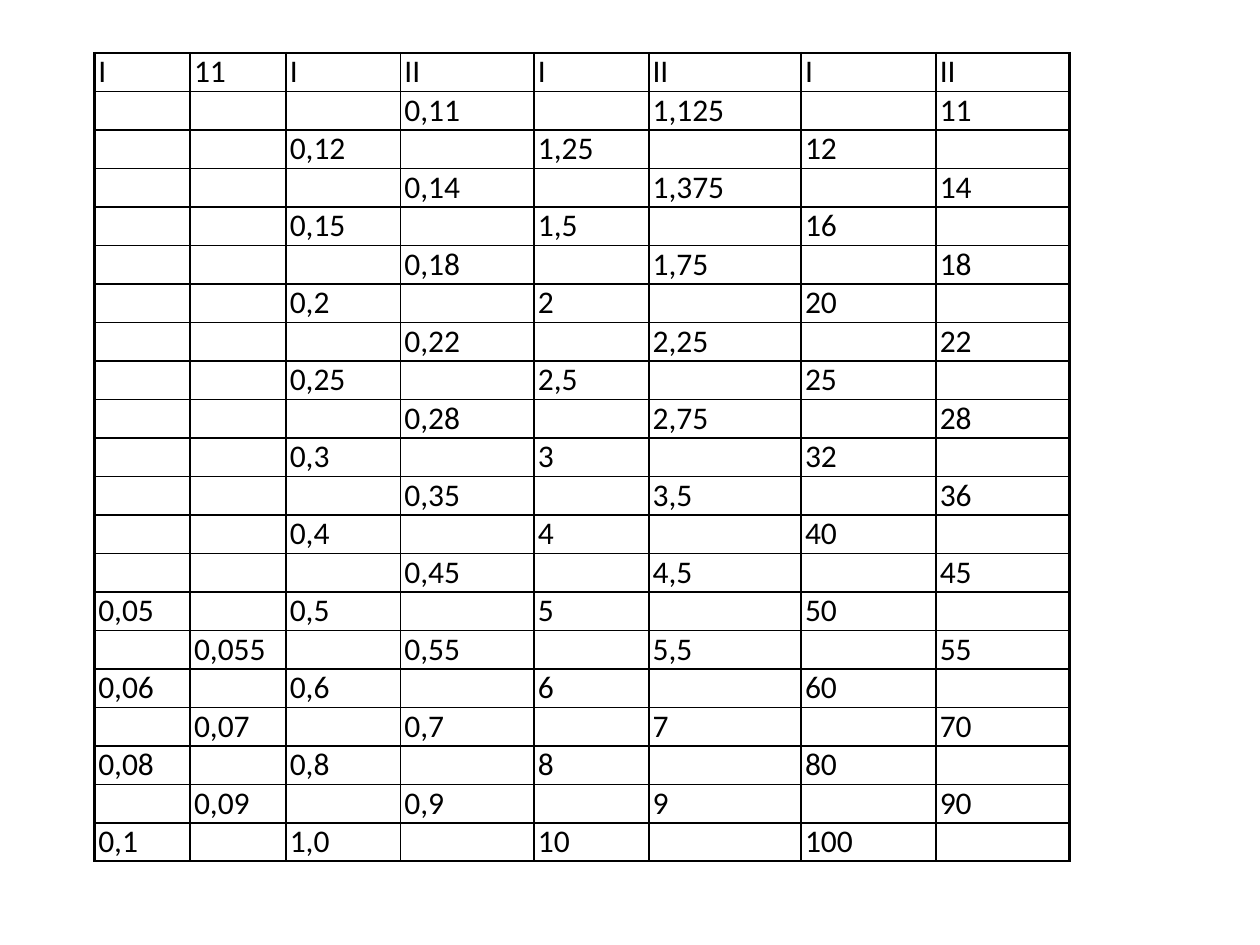
from lxml import etree
from pptx import Presentation
from pptx.dml.color import RGBColor
from pptx.enum import text
from pptx.oxml.ns import qn
from pptx.util import Inches, Pt

BLACK = RGBColor(0x00, 0x00, 0x00)
WHITE = RGBColor(0xFF, 0xFF, 0xFF)
FONT = "Calibri"
THIN, THICK = Pt(1), Pt(1.5)

LEFT, TOP, ROW_HEIGHT = 0.75, 0.42, 0.3
COL_WIDTHS = [0.76, 0.76, 0.91, 1.06, 0.91, 1.21, 1.07, 1.06]
HEADERS = ["I", "11", "I", "II", "I", "II", "I", "II"]

# One series per column pair, read downwards and ending in the last row
SERIES = [
    "0,05 0,055 0,06 0,07 0,08 0,09 0,1",
    "0,11 0,12 0,14 0,15 0,18 0,2 0,22 0,25 0,28 0,3 "
    "0,35 0,4 0,45 0,5 0,55 0,6 0,7 0,8 0,9 1,0",
    "1,125 1,25 1,375 1,5 1,75 2 2,25 2,5 2,75 3 "
    "3,5 4 4,5 5 5,5 6 7 8 9 10",
    "11 12 14 16 18 20 22 25 28 32 36 40 45 50 55 60 70 80 90 100",
]
N_ROWS = 1 + max(len(s.split()) for s in SERIES)


def build_grid():
    """Even rows fill the first column of each pair, odd rows the second."""
    grid = [HEADERS] + [[""] * len(HEADERS) for _ in range(N_ROWS - 1)]
    for pair, series in enumerate(SERIES):
        values = series.split()
        for row, value in enumerate(values, N_ROWS - len(values)):
            grid[row][2 * pair + row % 2] = value
    return grid


def add_border(cell, side, width):
    tc_pr = cell._tc.get_or_add_tcPr()
    ln = etree.SubElement(tc_pr, qn(f"a:ln{side}"), w=str(width))
    fill = etree.SubElement(ln, qn("a:solidFill"))
    etree.SubElement(fill, qn("a:srgbClr"), val=str(BLACK))


def style_cell(cell, value, outer):
    cell.margin_left = cell.margin_right = Inches(0.03)
    cell.margin_top = cell.margin_bottom = 0
    for side in "LRTB":
        add_border(cell, side, THICK if outer[side] else THIN)
    cell.fill.solid()
    cell.fill.fore_color.rgb = WHITE
    if not value:
        return
    p = cell.text_frame.paragraphs[0]
    p.text = value
    p.alignment = text.PP_ALIGN.JUSTIFY
    font = p.runs[0].font
    font.name, font.size = FONT, Pt(18)
    font.color.rgb = BLACK


def add_number_table(slide, grid):
    n_rows, n_cols = len(grid), len(COL_WIDTHS)
    table = slide.shapes.add_table(
        n_rows, n_cols, Inches(LEFT), Inches(TOP),
        Inches(sum(COL_WIDTHS)), Inches(ROW_HEIGHT * n_rows)).table
    table.first_row = table.horz_banding = False
    for column, width in zip(table.columns, COL_WIDTHS):
        column.width = Inches(width)
    for r, values in enumerate(grid):
        table.rows[r].height = Inches(ROW_HEIGHT)
        for c, value in enumerate(values):
            outer = {"L": c == 0, "R": c == n_cols - 1,
                     "T": r == 0, "B": r == n_rows - 1}
            style_cell(table.cell(r, c), value, outer)


def main():
    prs = Presentation()
    prs.slide_width, prs.slide_height = Inches(10), Inches(7.5)
    slide = prs.slides.add_slide(prs.slide_layouts[6])
    add_number_table(slide, build_grid())
    prs.save("out.pptx")


if __name__ == "__main__":
    main()
